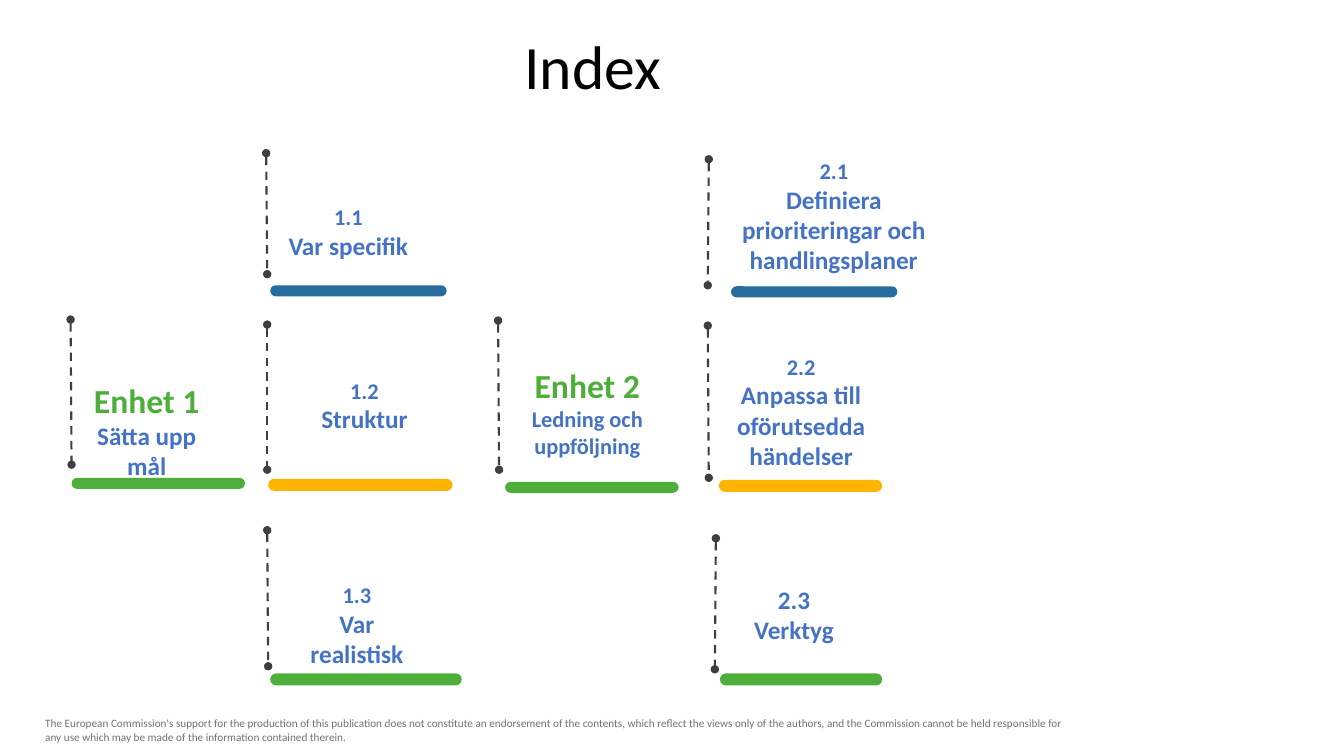
from dataclasses import dataclass

from lxml.etree import SubElement
from pptx import Presentation
from pptx.dml.color import RGBColor
from pptx.enum.dml import MSO_LINE
from pptx.enum.shapes import MSO_CONNECTOR as Connector, MSO_SHAPE as Shape
from pptx.enum.text import MSO_ANCHOR as Anchor, PP_ALIGN as Align
from pptx.oxml.ns import qn
from pptx.util import Pt

PX = 9144  # 100 px to the inch
FONT = "Calibri"
GREEN = RGBColor(0x4E, 0xAE, 0x3A)
BLUE = RGBColor(0x26, 0x6C, 0x9F)
AMBER = RGBColor(0xFF, 0xB5, 0x00)
TEXT_BLUE = RGBColor(0x44, 0x72, 0xC4)
STEM_GREY = RGBColor(0x3F, 0x3F, 0x3F)
FOOTER_GREY = RGBColor(0x75, 0x70, 0x70)
BLACK = RGBColor(0, 0, 0)

FOOTER = (
    "The European Commission's support for the production of this publication does not "
    "constitute an endorsement of the contents, which reflect the views only of the authors, "
    "and the Commission cannot be held responsible for any use which may be made of the "
    "information contained therein."
)


@dataclass
class Entry:
    """One index entry; stem, bar and label are placed relative to origin."""
    origin: tuple
    stem: tuple
    bar: tuple
    label: tuple
    colour: RGBColor
    heading: str
    topic: str
    heading_size: int = 16
    topic_size: int = 18
    heading_colour: RGBColor = TEXT_BLUE


ENTRIES = [
    Entry((70, 317), (1, 144), (1, 157, 172, 11), (10, 55, 131, 111), GREEN,
          "Enhet 1", "Sätta upp mål", 24, 18, GREEN),
    Entry((264, 152), (1, 120), (4, 131, 175, 11), (1, 45, 161, 67), BLUE,
          "1.1", "Var specifik"),
    Entry((265, 322), (0, 144), (1, 153, 183, 12), (16, 47, 161, 67), AMBER,
          "1.2", "Struktur"),
    Entry((265, 526), (1, 135), (3, 142, 190, 12), (17, 46, 144, 98), GREEN,
          "1.3", "Var realistisk"),
    Entry((494, 318), (1, 148), (7, 160, 172, 11), (8, 39, 161, 104), GREEN,
          "Enhet 2", "Ledning och uppföljning", 24, 16, GREEN),
    Entry((703, 158), (-1, 125), (22, 126, 165, 11), (22, -7, 204, 128), BLUE,
          "2.1", "Definiera prioriteringar och handlingsplaner"),
    Entry((702, 323), (1, 151), (11, 153, 162, 12), (12, 22, 161, 128), AMBER,
          "2.2", "Anpassa till oförutsedda händelser"),
    Entry((710, 534), (-1, 130), (4, 134, 161, 12), (0, 41, 155, 94), GREEN,
          "2.3", "Verktyg", 18),
]


def emu(*lengths):
    return [length * PX for length in lengths]


def style(para, size, colour, align, bold=False):
    para.alignment = align
    for span in para.runs:
        span.font.name = FONT
        span.font.size = Pt(size)
        span.font.bold = bold
        span.font.color.rgb = colour


def add_title(page, box):
    title = page.shapes.title
    title.left, title.top, title.width, title.height = emu(*box)
    frame = title.text_frame
    frame.text = "Index"
    frame.vertical_anchor = Anchor.MIDDLE
    frame.paragraphs[0].line_spacing = 0.9
    style(frame.paragraphs[0], 44, BLACK, Align.CENTER)


def add_text(page, box, lines, align):
    """Write (text, size, colour, bold) lines, one paragraph each."""
    frame = page.shapes.add_textbox(*emu(*box)).text_frame
    frame.word_wrap = True
    frame.text = "\n".join(line[0] for line in lines)
    for para, (_, size, colour, bold) in zip(frame.paragraphs, lines):
        style(para, size, colour, align, bold)


def add_stem(page, x, y, dx, dy):
    stem = page.shapes.add_connector(Connector.STRAIGHT, *emu(x, y, x + dx, y + dy))
    stem.line.color.rgb = STEM_GREY
    stem.line.width = Pt(1.5)
    stem.line.dash_style = MSO_LINE.DASH
    properties = stem.line._get_or_add_ln()
    for end in ("a:headEnd", "a:tailEnd"):
        SubElement(properties, qn(end), type="oval")
    SubElement(stem._element.spPr, qn("a:effectLst"))


def add_bar(page, box, colour):
    bar = page.shapes.add_shape(Shape.ROUNDED_RECTANGLE, *emu(*box))
    bar.adjustments[0] = 0.5
    bar.shadow.inherit = False
    bar.fill.solid()
    bar.fill.fore_color.rgb = colour
    bar.line.fill.background()


def add_entry(page, entry):
    x, y = entry.origin

    def placed(box):
        left, top, width, height = box
        return x + left, y + top, width, height

    add_bar(page, placed(entry.bar), entry.colour)
    add_stem(page, x, y, *entry.stem)
    add_text(page, placed(entry.label), [
        (entry.heading, entry.heading_size, entry.heading_colour, True),
        (entry.topic, entry.topic_size, TEXT_BLUE, True),
    ], Align.CENTER)


def main():
    deck = Presentation()
    deck.slide_width, deck.slide_height = emu(1333, 750)
    page = deck.slides.add_slide(deck.slide_layouts.get_by_name("Title Only"))
    add_title(page, (237, 26, 702, 86))
    for entry in ENTRIES:
        add_entry(page, entry)
    add_text(page, (35, 706, 1046, 37), [(FOOTER, 8, FOOTER_GREY, False)], Align.LEFT)
    deck.save("out.pptx")


if __name__ == "__main__":
    main()
